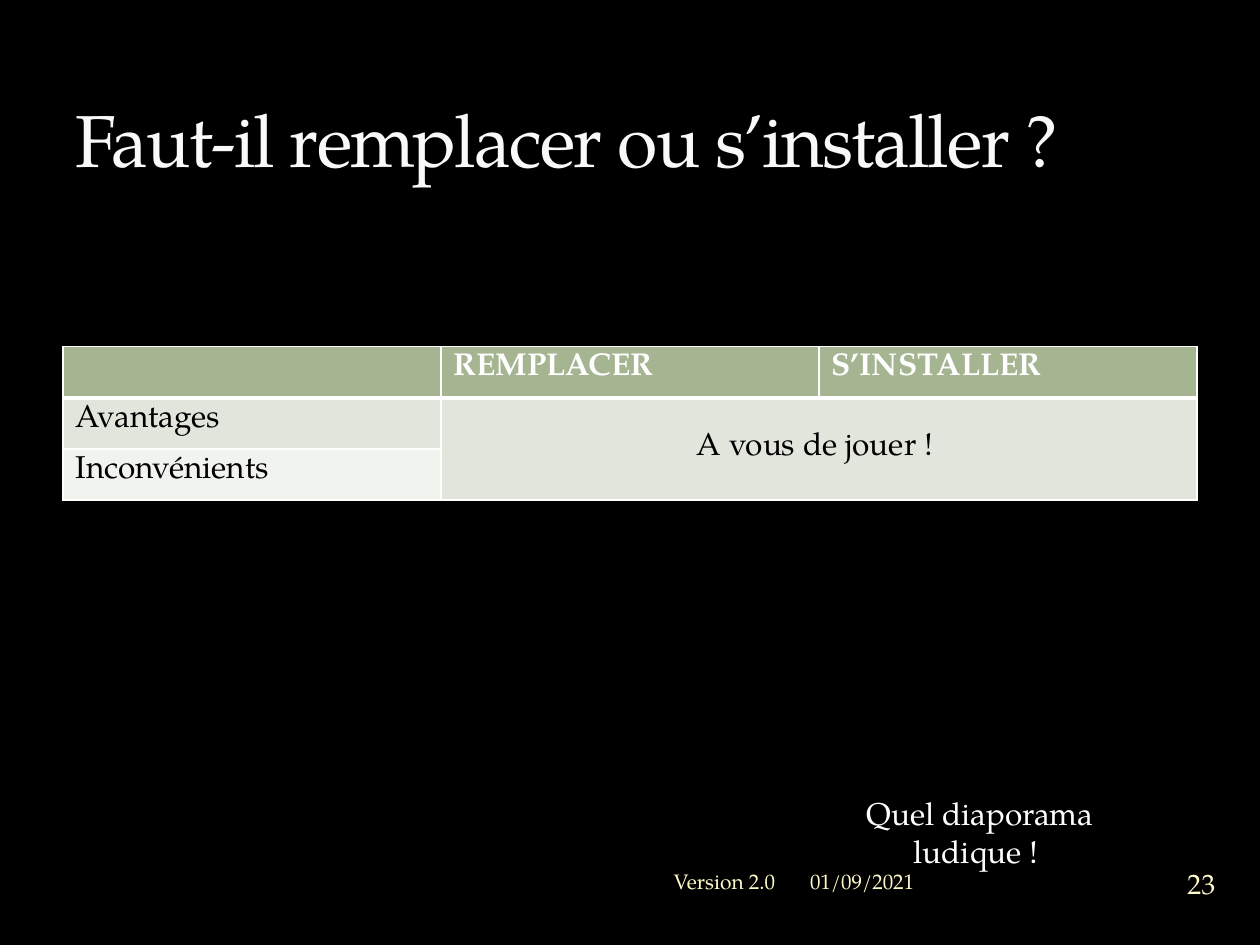
from dataclasses import dataclass

from lxml.etree import SubElement
from pptx import Presentation
from pptx.dml.color import RGBColor
from pptx.enum.text import MSO_ANCHOR as Anchor, PP_ALIGN as Align
from pptx.oxml.ns import qn
from pptx.util import Cm, Pt

FONT = "TeX Gyre Pagella"
WHITE, BLACK, CREAM = "FFFFFF", "000000", "FEFAC9"
HEADER, BAND_1, BAND_2 = "A5B592", "E1E5DC", "F0F3EE"
THIN, THICK = 1, 3


@dataclass
class Label:
    text: str
    left: float
    top: float
    width: float
    height: float
    size: float
    color: str = CREAM
    align: Align = Align.LEFT
    anchor: Anchor = Anchor.MIDDLE
    inset: bool = True


def rgb(value: str) -> RGBColor:
    return RGBColor.from_string(value)


def add_run(p, text: str, size: float, color: str, bold: bool = False):
    r = p.add_run()
    r.text = text
    r.font.name = FONT
    r.font.size = Pt(size)
    r.font.bold = bold
    r.font.color.rgb = rgb(color)
    return r


def add_label(slide, label: Label) -> None:
    sp = slide.shapes.add_textbox(Cm(label.left), Cm(label.top),
                                  Cm(label.width), Cm(label.height))
    tf = sp.text_frame
    tf.word_wrap = True
    tf.vertical_anchor = label.anchor
    if not label.inset:
        tf.margin_left = tf.margin_right = tf.margin_top = tf.margin_bottom = 0
    p = tf.paragraphs[0]
    p.alignment = label.align
    add_run(p, label.text, label.size, label.color)


def add_borders(cell, top: float, bottom: float) -> None:
    tc_pr = cell._tc.get_or_add_tcPr()
    for side, width in (("L", THIN), ("R", THIN), ("T", top), ("B", bottom)):
        ln = SubElement(tc_pr, qn(f"a:ln{side}"), w=str(Pt(width)))
        fill = SubElement(ln, qn("a:solidFill"))
        SubElement(fill, qn("a:srgbClr"), val=WHITE)


def add_comparison(slide, rows: list[list[str]], fills: list[str]) -> None:
    table = slide.shapes.add_table(len(rows), len(rows[0]), Cm(1.27), Cm(6.99),
                                   Cm(22.86), Cm(3.09)).table
    for i, (texts, fill) in enumerate(zip(rows, fills)):
        for j, text in enumerate(texts):
            cell = table.cell(i, j)
            add_borders(cell, THICK if i == 1 else THIN, THICK if i == 0 else THIN)
            cell.fill.solid()
            cell.fill.fore_color.rgb = rgb(fill)
            if text:
                add_run(cell.text_frame.paragraphs[0], text, 18,
                        WHITE if i == 0 else BLACK, bold=i == 0)
    # One shared answer cell under both options
    answer = table.cell(1, 1)
    answer.merge(table.cell(2, 2))
    answer.vertical_anchor = Anchor.MIDDLE
    answer.text_frame.paragraphs[0].alignment = Align.CENTER


def main() -> None:
    prs = Presentation()
    prs.slide_width, prs.slide_height = Cm(25.4), Cm(19.05)
    slide = prs.slides.add_slide(prs.slide_layouts[5])
    slide.background.fill.solid()
    slide.background.fill.fore_color.rgb = rgb(BLACK)

    # Title
    title = slide.shapes.title
    title.left, title.top = Cm(1.27), Cm(0.43)
    title.width, title.height = Cm(22.86), Cm(3.38)
    title.text_frame.vertical_anchor = Anchor.BOTTOM
    p = title.text_frame.paragraphs[0]
    p.alignment = Align.LEFT
    r = add_run(p, "Faut-il remplacer ou s’installer ?", 42, "F9F9F9")
    r.font._element.set("spc", "-100")  # tighter letter spacing

    # Comparison table
    add_comparison(slide, [
        ["", "REMPLACER", "S’INSTALLER"],
        ["Avantages", "A vous de jouer ! ", ""],
        ["Inconvénients", "", ""],
    ], [HEADER, BAND_1, BAND_2])

    # Remark and footer
    for label in (
        Label("Quel diaporama ludique ! ", 15.88, 15.88, 7.75, 1.02, 18, WHITE,
              Align.CENTER, Anchor.TOP),
        Label("01/09/2021", 16.08, 17.22, 7.19, 1.07, 12),
        Label("23", 23.37, 17.17, 1.7, 1.27, 16, align=Align.CENTER, inset=False),
        Label("Version 2.0", 5.92, 17.22, 9.96, 1.07, 12, align=Align.RIGHT),
    ):
        add_label(slide, label)

    prs.save("out.pptx")


if __name__ == "__main__":
    main()
